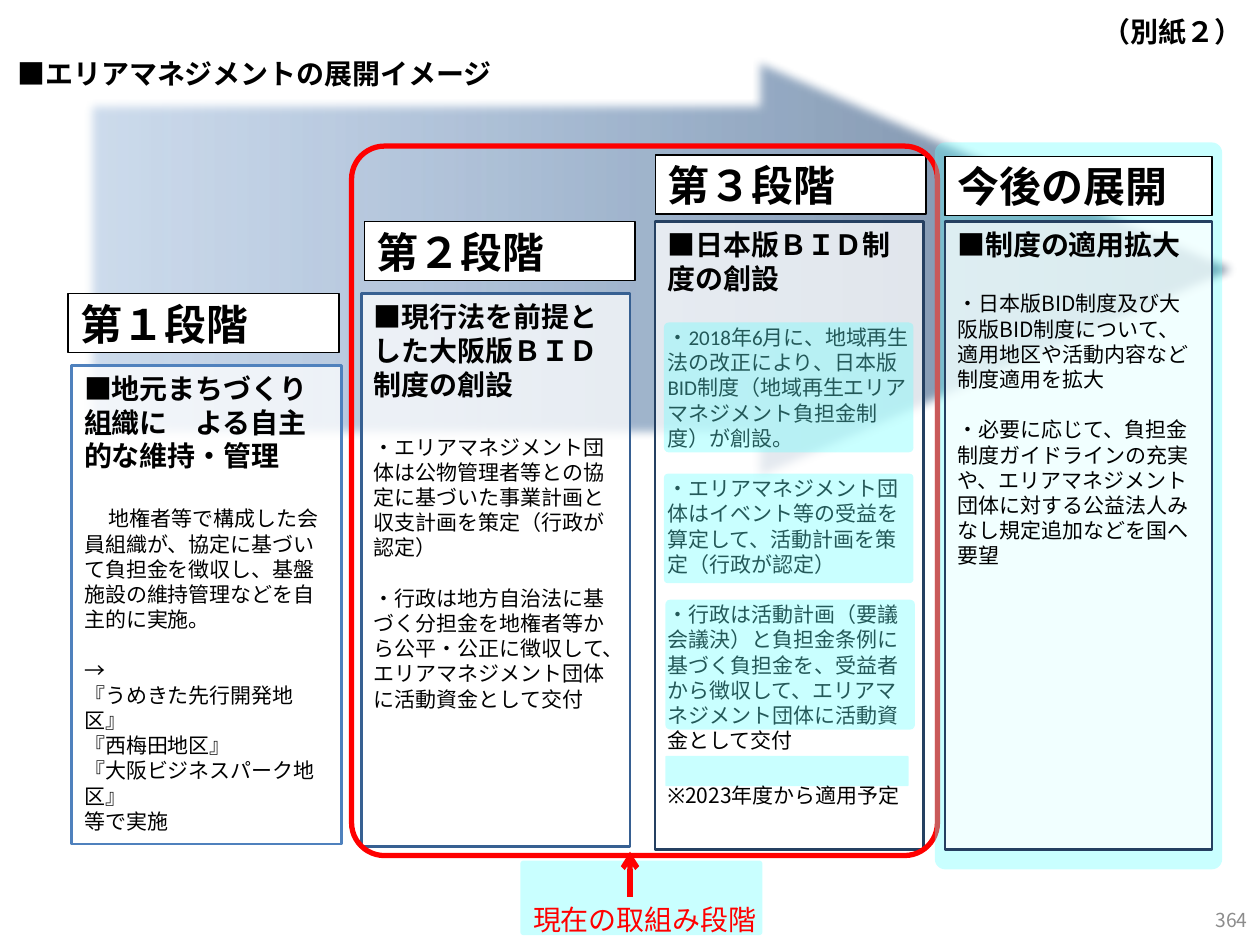
import lxml.etree
import pptx
import pptx.dml.color
import pptx.enum.shapes
import pptx.enum.text
import pptx.oxml.ns
import pptx.util

Pt = pptx.util.Pt
SHAPE = pptx.enum.shapes.MSO_SHAPE
ANCHOR = pptx.enum.text.MSO_ANCHOR
ALIGN = pptx.enum.text.PP_ALIGN
qn = pptx.oxml.ns.qn

COLORS = {
    "black": "000000", "white": "FFFFFF", "red": "FF0000", "cyan": "66FFFF",
    "gray": "8C8C8C", "blue": "4F81BD", "mid_blue": "376092", "navy": "254061",
}
LATIN, GOTHIC = "Calibri", "Noto Sans CJK JP"
LINE_PITCH = 1.2

# Each stage: title, title box, body box, border colour, heading, body paragraphs.
# Each body paragraph: size of the empty line above it (0 for none), then its
# runs as (text, size, font).
STAGES = [
    ("第１段階", (38.9, 167.8, 154.8, 33.8), (41, 208.8, 154.1, 273.6), "blue",
     "■地元まちづくり組織に　よる自主的な維持・管理", [
         (14, [("　", 14, LATIN),
               ("地権者等で構成した会員組織が、協定に基づいて負担金を徴収し、基盤施設の維持管理などを自主的に実施。", 12, GOTHIC)]),
         (12, [("→", 12, GOTHIC)]),
         (0, [("『うめきた先行開発地区』", 12, GOTHIC)]),
         (0, [("『西梅田地区』", 12, GOTHIC)]),
         (0, [("『大阪ビジネスパーク地区』", 12, GOTHIC)]),
         (0, [("等で実施", 12, GOTHIC)]),
     ]),
    ("第２段階", (208.1, 126.7, 154.8, 33.8), (206.6, 167.8, 153.4, 316.1), "mid_blue",
     "■現行法を前提とした大阪版ＢＩＤ制度の創設", [
         (16, [("・エリアマネジメント団体は公物管理者等との協定に基づいた事業計画と収支計画を策定（行政が認定）", 12, GOTHIC)]),
         (12, [("・行政は地方自治法に基づく分担金を地権者等から公平・公正に徴収して、エリアマネジメント団体に活動資金として交付", 12, GOTHIC)]),
     ]),
    ("第３段階", (374.4, 88.6, 154.8, 33.8), (374.4, 126.7, 153.4, 358.6), "navy",
     "■日本版ＢＩＤ制度の創設", [
         (14, [("・2018年6月に、地域再生法の改正により、日本版BID制度（地域再生エリアマネジメント負担金制度）が創設。", 12, LATIN)]),
         (12, [("・エリアマネジメント団体はイベント等の受益を算定して、活動計画を策定（行政が認定）", 12, LATIN)]),
         (12, [("・行政は活動計画（要議会議決）と負担金条例に基づく負担金を、受益者から徴収して、エリアマネジメント団体に活動資金として交付", 12, LATIN)]),
         (14, [("※", 12, LATIN), ("2023年度", 12, GOTHIC), ("から適用予定", 12, LATIN)]),
     ]),
    ("今後の展開", (540, 89.3, 152.6, 33.8), (540, 126.7, 152.6, 358.6), "navy",
     "■制度の適用拡大", [
         (14, [("・日本版BID制度及び大阪版BID制度について、適用地区や活動内容など制度適用を拡大", 12, GOTHIC)]),
         (12, [("・必要に応じて、負担金制度ガイドラインの充実や、エリアマネジメント団体に対する公益法人みなし規定追加などを国へ要望", 12, GOTHIC)]),
     ]),
]
CURRENT_LABEL_HALO = (297.4, 491.8, 138.2, 42.5)
FUTURE_HALO = (534.2, 81.4, 164.2, 415.4)
STAGE3_HIGHLIGHTS = [
    (379.4, 184.3, 142.6, 74.2), (379.4, 270.7, 142.6, 62.6),
    (380.2, 342.7, 142.6, 74.2), (380.2, 432, 139, 17.3),
]


def rgb(color):
    return pptx.dml.color.RGBColor.from_string(COLORS[color])


def add_shape(slide, kind, box, fill=None, opacity=100, border=None, border_width=0):
    shape = slide.shapes.add_shape(kind, *map(Pt, box))
    shape.shadow.inherit = False
    if fill:
        shape.fill.solid()
        shape.fill.fore_color.rgb = rgb(fill)
        if opacity < 100:
            tint = shape.fill._xPr.find(".//" + qn("a:srgbClr"))
            lxml.etree.SubElement(tint, qn("a:alpha"), val=str(opacity * 1000))
    else:
        shape.fill.background()
    if border:
        shape.line.color.rgb = rgb(border)
        shape.line.width = Pt(border_width)
    else:
        shape.line.fill.background()
    return shape


def add_highlight(slide, box):
    halo = add_shape(slide, SHAPE.ROUNDED_RECTANGLE, box, "cyan", 35)
    halo.adjustments[0] = 0.036


def style(run, size, font, color="black", bold=False):
    run.font.size = Pt(size)
    run.font.name = font
    run.font.bold = bold
    run.font.color.rgb = rgb(color)


def write_line(shape, text, size, font=LATIN, color="black", bold=False,
               align=ALIGN.LEFT, anchor=ANCHOR.MIDDLE):
    frame = shape.text_frame
    frame.text = text
    frame.vertical_anchor = anchor
    frame.paragraphs[0].alignment = align
    style(frame.paragraphs[0].runs[0], size, font, color, bold)


def add_label(slide, box, text, size, margins=(7.2, 3.6), wrap=True, **look):
    label = slide.shapes.add_textbox(*map(Pt, box))
    frame = label.text_frame
    frame.word_wrap = wrap
    frame.margin_left = frame.margin_right = Pt(margins[0])
    frame.margin_top = frame.margin_bottom = Pt(margins[1])
    write_line(label, text, size, **look)
    return label


def add_progress_arrow(slide):
    """Broad soft-edged arrow, darkest at its tip."""
    arrow = add_shape(slide, SHAPE.RIGHT_ARROW, (48.2, 28.1, 669.6, 252))
    arrow.adjustments[0] = 0.773
    arrow.adjustments[1] = 1.142
    arrow.fill.gradient()
    gradient = arrow._element.spPr.find(qn("a:gradFill"))
    for child in list(gradient):
        gradient.remove(child)
    stops = lxml.etree.SubElement(gradient, qn("a:gsLst"))
    for position, color, opacity in [(1, "navy", 66), (48, "mid_blue", 50), (100, "blue", 28)]:
        stop = lxml.etree.SubElement(stops, qn("a:gs"), pos=str(position * 1000))
        tint = lxml.etree.SubElement(stop, qn("a:srgbClr"), val=COLORS[color])
        lxml.etree.SubElement(tint, qn("a:alpha"), val=str(opacity * 1000))
    lxml.etree.SubElement(gradient, qn("a:lin"), ang=str(180 * 60000), scaled="0")
    effects = arrow._element.spPr.find(qn("a:effectLst"))
    lxml.etree.SubElement(effects, qn("a:softEdge"), rad=str(Pt(5)))


def add_stage(slide, title, title_box, body_box, border, heading, paragraphs):
    body = add_shape(slide, SHAPE.RECTANGLE, body_box, "white", 75, border, 1.5)
    write_line(body, heading, 16, bold=True, anchor=ANCHOR.TOP)
    for gap, runs in paragraphs:
        paragraph = body.text_frame.add_paragraph()
        paragraph.alignment = ALIGN.LEFT
        paragraph.space_before = Pt(gap * LINE_PITCH)
        for text, size, font in runs:
            run = paragraph.add_run()
            run.text = text
            style(run, size, font)
    header = add_shape(slide, SHAPE.RECTANGLE, title_box, "white", 100, "black", 0.75)
    write_line(header, title, 24, bold=True)


def add_current_pointer(slide):
    pointer = slide.shapes.add_connector(
        pptx.enum.shapes.MSO_CONNECTOR.STRAIGHT, Pt(360), Pt(486.7), Pt(360), Pt(512.6))
    pointer.line.color.rgb = rgb("red")
    pointer.line.width = Pt(3)
    lxml.etree.SubElement(pointer.line._get_or_add_ln(), qn("a:headEnd"), type="arrow")
    lxml.etree.SubElement(pointer._element.spPr, qn("a:effectLst"))


def main():
    deck = pptx.Presentation()
    deck.slide_width, deck.slide_height = Pt(720), Pt(540)
    slide = deck.slides.add_slide(deck.slide_layouts[6])

    add_highlight(slide, CURRENT_LABEL_HALO)
    add_progress_arrow(slide)
    for stage in STAGES[:3]:
        add_stage(slide, *stage)
    add_label(slide, (0, 15.1, 501.8, 54), "■エリアマネジメントの展開イメージ", 16,
              margins=(10.1, 2.9), bold=True)
    add_label(slide, (393.8, -2.2, 326.2, 40.3), "（別紙２）", 16,
              margins=(10.1, 2.9), bold=True, align=ALIGN.RIGHT)

    current_frame = add_shape(slide, SHAPE.ROUNDED_RECTANGLE, (200.9, 83.5, 334.8, 405.4),
                              border="red", border_width=3)
    current_frame.adjustments[0] = 0.056
    current_label = add_label(slide, (304.6, 515.5, 129.6, 19.4), "現在の取組み段階", 16,
                              margins=(0, 0), wrap=False, font=GOTHIC, color="red",
                              anchor=ANCHOR.TOP)
    current_label.text_frame.auto_size = pptx.enum.text.MSO_AUTO_SIZE.SHAPE_TO_FIT_TEXT
    add_current_pointer(slide)

    add_highlight(slide, FUTURE_HALO)
    add_stage(slide, *STAGES[3])
    add_label(slide, (552.2, 511.2, 167.8, 28.8), "364", 11, font=GOTHIC, color="gray",
              align=ALIGN.RIGHT)
    for box in STAGE3_HIGHLIGHTS:
        add_highlight(slide, box)

    deck.save("out.pptx")


if __name__ == "__main__":
    main()
